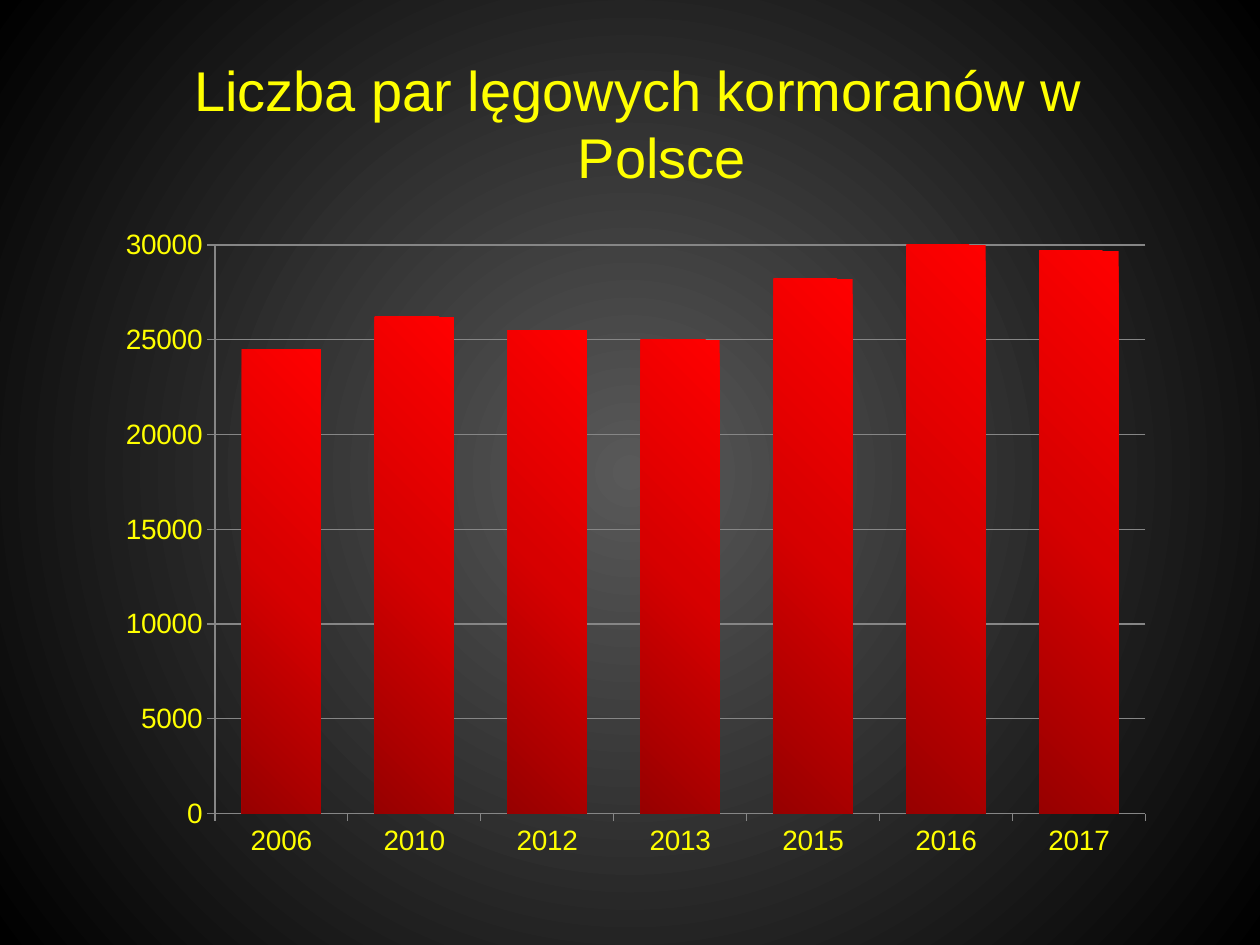
"""Build a slide charting the number of breeding cormorant pairs in Poland."""
from dataclasses import dataclass

import lxml.etree
import pptx
import pptx.chart.data
import pptx.dml.color
import pptx.enum.chart
import pptx.enum.text
import pptx.oxml
import pptx.oxml.ns
import pptx.util
from pptx.util import Inches


@dataclass(frozen=True)
class Gradient:
    """Stops as (percent, colour) pairs and the focus as left, top, right, bottom percents."""
    stops: tuple
    focus: tuple


@dataclass(frozen=True)
class Theme:
    """Colours, type sizes and gradients of the slide."""
    font: str = "Arial"
    text: str = "FFFF00"
    line: str = "868686"
    title_size: int = 32
    label_size: int = 16
    backdrop: Gradient = Gradient(((0, "595959"), (100, "000000")), (50, 50, 50, 50))
    bars: Gradient = Gradient(((0, "970000"), (50, "D70000"), (100, "FF0000")), (0, 100, 100, 0))


@dataclass(frozen=True)
class Count:
    """Breeding pairs counted in one year."""
    year: str
    pairs: int


THEME = Theme()
COUNTS = [
    Count("2006", 24500), Count("2010", 26200), Count("2012", 25500), Count("2013", 25000),
    Count("2015", 28200), Count("2016", 30000), Count("2017", 29700),
]


def rgb(value: str) -> pptx.dml.color.RGBColor:
    """Return a colour from its hexadecimal form."""
    return pptx.dml.color.RGBColor.from_string(value)


def fill_circular(fill, gradient: Gradient) -> None:
    """Give a fill a circular gradient."""
    fill.gradient()
    element = fill._fill._gradFill
    for child in list(element):
        element.remove(child)
    tag = pptx.oxml.ns.qn
    stops = lxml.etree.SubElement(element, tag("a:gsLst"))
    for percent, colour in gradient.stops:
        stop = lxml.etree.SubElement(stops, tag("a:gs"), pos=str(percent * 1000))
        lxml.etree.SubElement(stop, tag("a:srgbClr"), val=colour)
    circle = lxml.etree.SubElement(element, tag("a:path"), path="circle")
    sides = {side: str(percent * 1000) for side, percent in zip("ltrb", gradient.focus)}
    lxml.etree.SubElement(circle, tag("a:fillToRect"), **sides)


def style_font(font, *, size: int, colour: str) -> None:
    """Set the typeface, size and colour of a font."""
    font.name = THEME.font
    font.size = pptx.util.Pt(size)
    font.color.rgb = rgb(colour)


def write_title(box, text: str, *, size: int, colour: str, hanging: float) -> None:
    """Place and write the centred title with a hanging indent."""
    box.left, box.top = Inches(1.22), Inches(0.39)
    box.width, box.height = Inches(7.69), Inches(0.7)
    frame = box.text_frame
    frame.word_wrap = True
    frame.auto_size = pptx.enum.text.MSO_AUTO_SIZE.NONE
    frame.vertical_anchor = pptx.enum.text.MSO_ANCHOR.TOP
    para = frame.paragraphs[0]
    para.alignment = pptx.enum.text.PP_ALIGN.CENTER
    para.space_before = pptx.util.Pt(0)
    properties = para._p.get_or_add_pPr()
    properties.set("marL", str(Inches(hanging)))
    properties.set("indent", str(-Inches(hanging)))
    span = para.add_run()
    span.text = text
    style_font(span.font, size=size, colour=colour)


def style_line(line) -> None:
    """Draw a thin chart line."""
    line.color.rgb = rgb(THEME.line)
    line.width = pptx.util.Pt(0.75)


def draw_chart(page, counts: list[Count]) -> None:
    """Draw the counts as columns."""
    data = pptx.chart.data.CategoryChartData()
    data.categories = [count.year for count in counts]
    data.add_series("Series 1", [count.pairs for count in counts])
    chart = page.shapes.add_chart(
        pptx.enum.chart.XL_CHART_TYPE.COLUMN_CLUSTERED,
        Inches(0.83), Inches(1.72), Inches(8.43), Inches(5.18), data,
    ).chart
    chart.has_title = False
    chart.has_legend = False
    style_font(chart.font, size=THEME.label_size, colour=THEME.text)

    plot = chart.plots[0]
    plot.gap_width = 68
    plot.vary_by_categories = False
    fill_circular(plot.series[0].format.fill, THEME.bars)

    for axis in (chart.category_axis, chart.value_axis):
        axis.major_tick_mark = pptx.enum.chart.XL_TICK_MARK.OUTSIDE
        axis.minor_tick_mark = pptx.enum.chart.XL_TICK_MARK.NONE
        style_line(axis.format.line)
    values = chart.value_axis
    values.minimum_scale, values.maximum_scale, values.major_unit = 0, 30000, 5000
    values.has_major_gridlines = True
    style_line(values.major_gridlines.format.line)


def main() -> None:
    """Build and save the deck."""
    deck = pptx.Presentation()
    deck.slide_width, deck.slide_height = Inches(10), Inches(7.5)
    page = deck.slides.add_slide(deck.slide_layouts.get_by_name("Title Only"))
    fill_circular(page.background.fill, THEME.backdrop)
    write_title(page.shapes.title, "Liczba par lęgowych kormoranów w Polsce",
                size=THEME.title_size, colour=THEME.text, hanging=0.38)
    draw_chart(page, COUNTS)
    deck.save("out.pptx")


if __name__ == "__main__":
    main()
